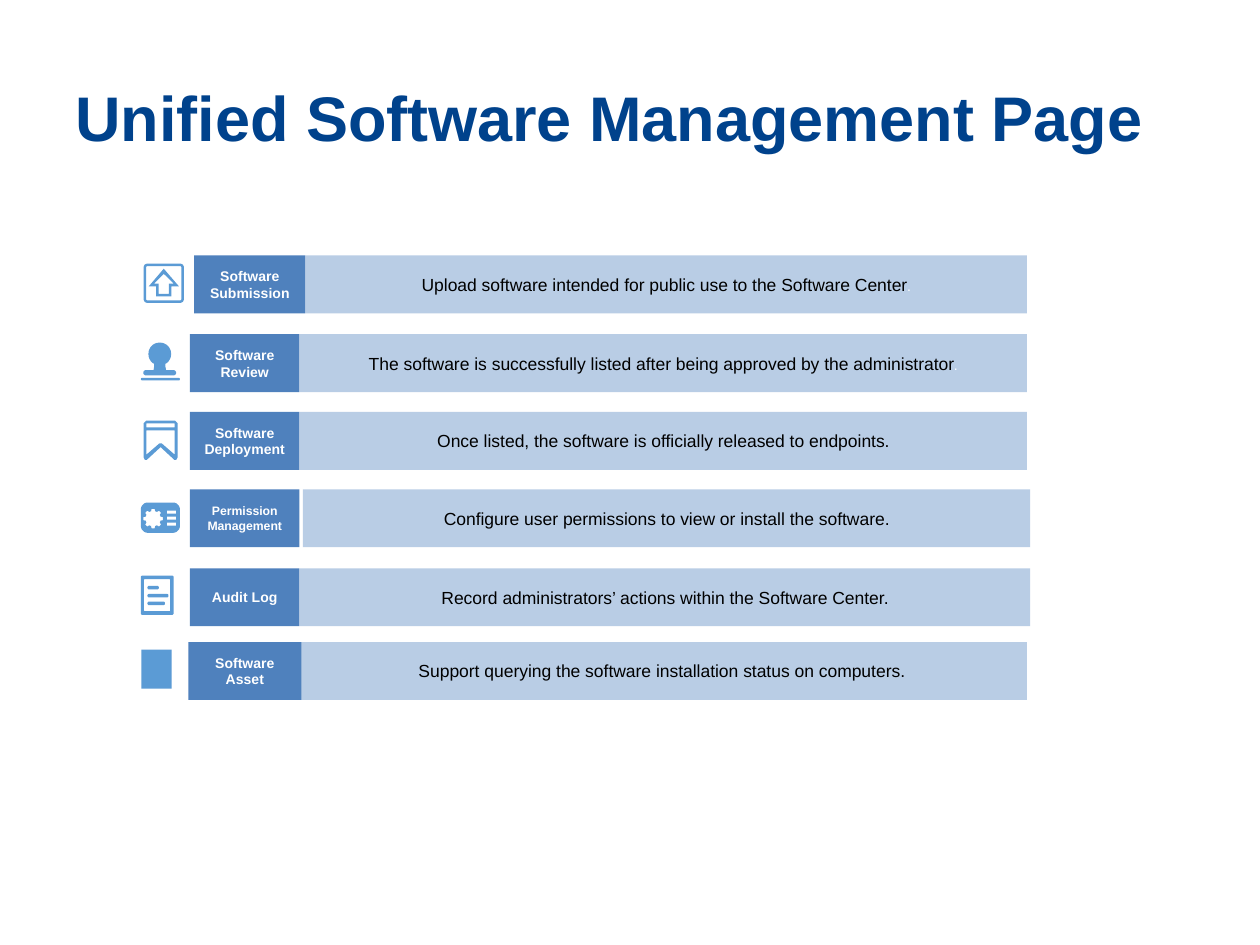
import math

import pptx
import pptx.dml.color
import pptx.enum.shapes
import pptx.enum.text
import pptx.util

Pt = pptx.util.Pt
RGBColor = pptx.dml.color.RGBColor
PP_ALIGN = pptx.enum.text.PP_ALIGN
RECTANGLE = pptx.enum.shapes.MSO_SHAPE.RECTANGLE

NAVY = RGBColor(0x00, 0x42, 0x8C)
BLUE = RGBColor(0x4F, 0x81, 0xBD)
PALE_BLUE = RGBColor(0xB9, 0xCD, 0xE5)
ICON_BLUE = RGBColor(0x5B, 0x9B, 0xD5)
BLACK = RGBColor(0x00, 0x00, 0x00)
WHITE = RGBColor(0xFF, 0xFF, 0xFF)

FONT = "Arial"
ROW_HEIGHT = 33.1
ICON_UNIT = Pt(0.1)


def arc(cx, cy, radius, start, end, steps):
    angles = [math.radians(start + (end - start) * i / steps) for i in range(steps + 1)]
    return [(cx + radius * math.cos(a), cy + radius * math.sin(a)) for a in angles]


def rounded(x, y, w, h, radius):
    corners = [
        (x + w - radius, y + h - radius, 0),
        (x + radius, y + h - radius, 90),
        (x + radius, y + radius, 180),
        (x + w - radius, y + radius, 270),
    ]
    return [pt for cx, cy, a in corners for pt in arc(cx, cy, radius, a, a + 90, 6)]


def box(x, y, w, h):
    return [(x, y), (x + w, y), (x + w, y + h), (x, y + h)]


def gear(cx, cy, outer, inner, teeth):
    step = 360 / teeth
    points = []
    for i in range(teeth):
        a = i * step
        points += arc(cx, cy, outer, a - step / 5, a + step / 5, 2)
        points += arc(cx, cy, inner, a + step * 0.35, a + step * 0.65, 2)
    return points


# Icon outlines in tenths of a point; an outline inside another is a hole.
UPLOAD = [
    rounded(0, 0, 230, 224, 20),
    rounded(14, 14, 202, 196, 8),
    [(158, 187), (72, 187), (72, 130), (29, 130), (115, 29), (202, 130), (158, 130)],
    [(86, 173), (144, 173), (144, 115), (173, 115), (115, 58), (58, 115), (86, 115)],
]
STAMP = [
    arc(108, 65, 65, 120, 420, 40)
    + [(140, 137), (144, 158), (72, 158), (76, 137)],
    rounded(14, 158, 187, 29, 14),
    rounded(0, 202, 223, 14, 7),
]
BOOKMARK = [
    [(0, 14), (14, 0), (180, 0), (194, 14), (194, 210), (187, 223), (175, 223),
     (97, 151), (19, 223), (7, 223), (0, 210)],
    box(16, 16, 162, 22),
    [(16, 56), (16, 194), (90, 130), (104, 130), (178, 194), (178, 56)],
]
BADGE = [rounded(0, 0, 223, 173, 40), gear(70, 92, 56, 44, 8)]
BADGE += [box(149, y, 52, 17) for y in (47, 81, 115)]
LOG = [rounded(0, 0, 187, 223, 8), rounded(18, 20, 150, 182, 4)]
LOG += [rounded(38, y, w, 20, 10) for y, w in ((58, 65), (104, 120), (148, 100))]


def add_run(p, text, size, color, bold=False):
    r = p.add_run()
    r.text = text
    r.font.name = FONT
    r.font.size = Pt(size)
    r.font.bold = bold
    r.font.color.rgb = color


def write(sp, text, size, color, bold=False, align=PP_ALIGN.CENTER):
    tf = sp.text_frame
    tf.word_wrap = True
    tf.vertical_anchor = pptx.enum.text.MSO_ANCHOR.MIDDLE
    p = tf.paragraphs[0]
    p.alignment = align
    add_run(p, text, size, color, bold)
    return p


def paint(sp, color):
    sp.shadow.inherit = False
    sp.fill.solid()
    sp.fill.fore_color.rgb = color
    sp.line.fill.background()


def add_block(s, x, y, w, h, color):
    sp = s.shapes.add_shape(RECTANGLE, Pt(x), Pt(y), Pt(w), Pt(h))
    paint(sp, color)
    return sp


def add_icon(s, outlines, x, y):
    first, *others = outlines
    builder = s.shapes.build_freeform(*first[0], scale=ICON_UNIT)
    builder.add_line_segments(first[1:], close=True)
    for outline in others:
        builder.move_to(*outline[0])
        builder.add_line_segments(outline[1:], close=True)
    paint(builder.convert_to_shape(Pt(x), Pt(y)), ICON_BLUE)


def add_title(s, text, x, y, w, h):
    sp = s.shapes.add_textbox(Pt(x), Pt(y), Pt(w), Pt(h))
    write(sp, text, 36, NAVY, bold=True, align=PP_ALIGN.LEFT)


def add_row(s, y, label, text, label_span, bar_span, label_size=8, pale_stop=False):
    """Spans are left and right edges; pale_stop ends the text with a white full stop."""
    left, right = bar_span
    bar = add_block(s, left, y, right - left, ROW_HEIGHT, PALE_BLUE)
    p = write(bar, text, 10, BLACK)
    if pale_stop:
        add_run(p, ".", 8, WHITE)
    left, right = label_span
    tag = add_block(s, left, y, right - left, ROW_HEIGHT, BLUE)
    write(tag, label, label_size, WHITE, bold=True)


def main():
    prs = pptx.Presentation()
    prs.slide_width, prs.slide_height = Pt(720), Pt(540)
    s = prs.slides.add_slide(prs.slide_layouts[6])

    add_title(s, "Unified Software Management Page", 36, 21.6, 648, 90)

    add_row(s, 146, "Software Submission",
            "Upload software intended for public use to the Software Center",
            (111, 174.6), (174.6, 586.8), pale_stop=True)
    add_row(s, 191, "Software Review",
            "The software is successfully listed after being approved by the administrator",
            (108.6, 171.2), (171.2, 586.8), pale_stop=True)
    add_row(s, 235.4, "Software Deployment",
            "Once listed, the software is officially released to endpoints.",
            (108.6, 171.2), (171.2, 586.8))
    add_row(s, 279.6, "Permission Management",
            "Configure user permissions to view or install the software.",
            (108.6, 171.2), (173.1, 588.7), label_size=7)
    add_row(s, 324.8, "Audit Log",
            "Record administrators’ actions within the Software Center.",
            (108.6, 171.2), (171.2, 588.7))
    add_row(s, 366.9, "Software Asset",
            "Support querying the software installation status on computers.",
            (107.6, 172.3), (169.4, 586.8))

    icons = [(UPLOAD, 82.1, 150.7), (STAMP, 80.5, 195.8), (BOOKMARK, 82.1, 240.4),
             (BADGE, 80.5, 287.2), (LOG, 80.5, 329)]
    for outlines, x, y in icons:
        add_icon(s, outlines, x, y)
    add_block(s, 80.8, 371.2, 17.3, 22.3, ICON_BLUE)

    prs.save("out.pptx")


if __name__ == "__main__":
    main()
